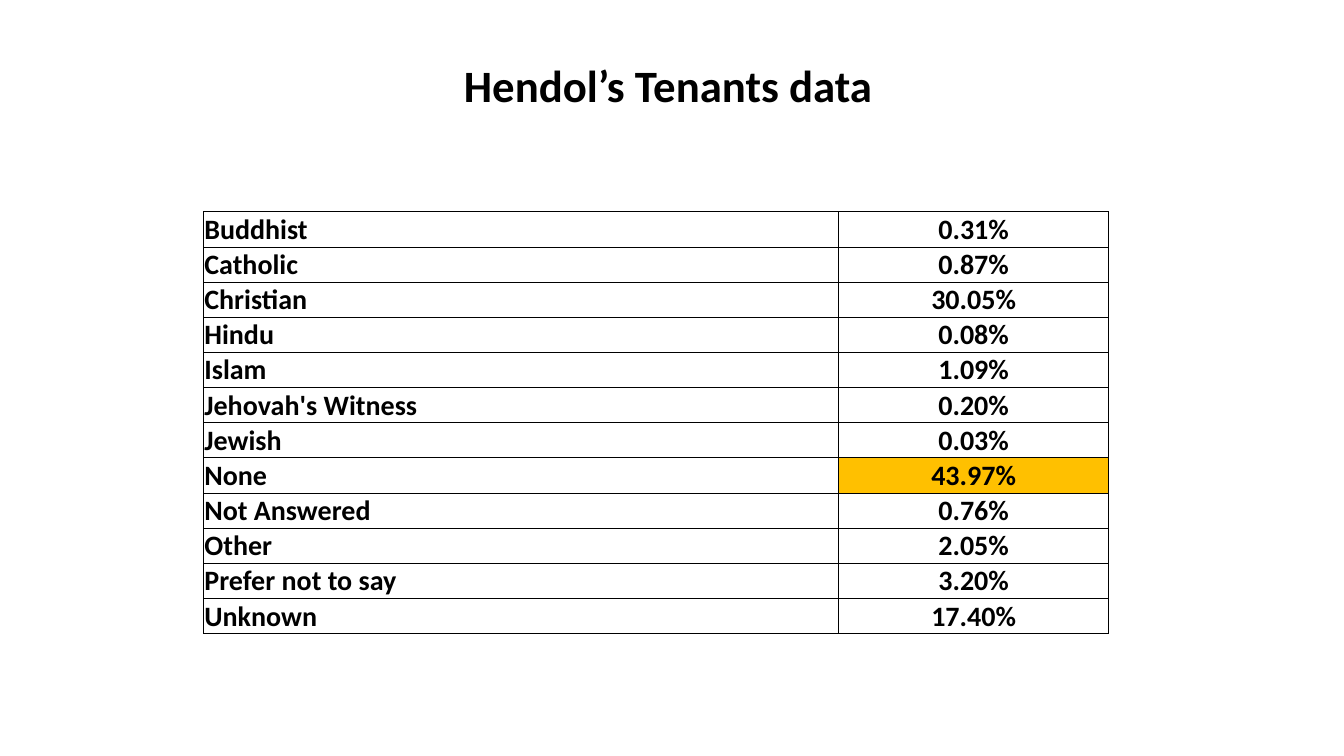
from lxml.etree import SubElement
from pptx import Presentation
from pptx.dml.color import RGBColor
from pptx.enum.text import MSO_ANCHOR as Anchor, PP_ALIGN as Align
from pptx.oxml.ns import qn
from pptx.util import Pt

TITLE = "Hendol’s Tenants data"
RELIGIONS = [
    ("Buddhist", "0.31%"),
    ("Catholic", "0.87%"),
    ("Christian", "30.05%"),
    ("Hindu", "0.08%"),
    ("Islam", "1.09%"),
    ("Jehovah's Witness", "0.20%"),
    ("Jewish", "0.03%"),
    ("None", "43.97%"),
    ("Not Answered", "0.76%"),
    ("Other", "2.05%"),
    ("Prefer not to say", "3.20%"),
    ("Unknown", "17.40%"),
]
HIGHLIGHT = "43.97%"

FONT = "Calibri"
BLACK = RGBColor(0x00, 0x00, 0x00)
AMBER = RGBColor(0xFF, 0xC0, 0x00)
COLUMN_WIDTHS = (453.6, 193)
ROW_HEIGHT = 24.6


def style_text(para, size, align):
    para.alignment = align
    for span in para.runs:
        span.font.name = FONT
        span.font.size = Pt(size)
        span.font.bold = True
        span.font.color.rgb = BLACK


def add_borders(cell):
    properties = cell._tc.get_or_add_tcPr()
    for side in ("lnL", "lnR", "lnT", "lnB"):
        line = SubElement(properties, qn(f"a:{side}"), w=str(Pt(0.5)))
        fill = SubElement(line, qn("a:solidFill"))
        SubElement(fill, qn("a:srgbClr"), val=str(BLACK))


deck = Presentation()
deck.slide_width, deck.slide_height = Pt(960), Pt(540)
page = deck.slides.add_slide(deck.slide_layouts[5])

# Title
title = page.shapes.title
title.left, title.top, title.width, title.height = Pt(162.7), Pt(37.4), Pt(629.3), Pt(46)
title.text_frame.text = TITLE
title.text_frame.vertical_anchor = Anchor.TOP
style_text(title.text_frame.paragraphs[0], 32, Align.CENTER)

# Table of religions
frame = page.shapes.add_table(
    len(RELIGIONS), len(COLUMN_WIDTHS), Pt(145.4), Pt(151.2),
    Pt(sum(COLUMN_WIDTHS)), Pt(ROW_HEIGHT * len(RELIGIONS)))
table = frame.table
table.first_row = table.horz_banding = False
for column, width in zip(table.columns, COLUMN_WIDTHS):
    column.width = Pt(width)

for row_index, record in enumerate(RELIGIONS):
    table.rows[row_index].height = Pt(ROW_HEIGHT)
    for column_index, (text, align) in enumerate(zip(record, (Align.LEFT, Align.CENTER))):
        cell = table.cell(row_index, column_index)
        cell.text_frame.text = text
        cell.vertical_anchor = Anchor.BOTTOM
        cell.margin_left = cell.margin_right = Pt(0.6)
        cell.margin_top, cell.margin_bottom = Pt(0.6), Pt(0)
        style_text(cell.text_frame.paragraphs[0], 20, align)
        add_borders(cell)
        if text == HIGHLIGHT:
            cell.fill.solid()
            cell.fill.fore_color.rgb = AMBER
        else:
            cell.fill.background()

deck.save("out.pptx")
